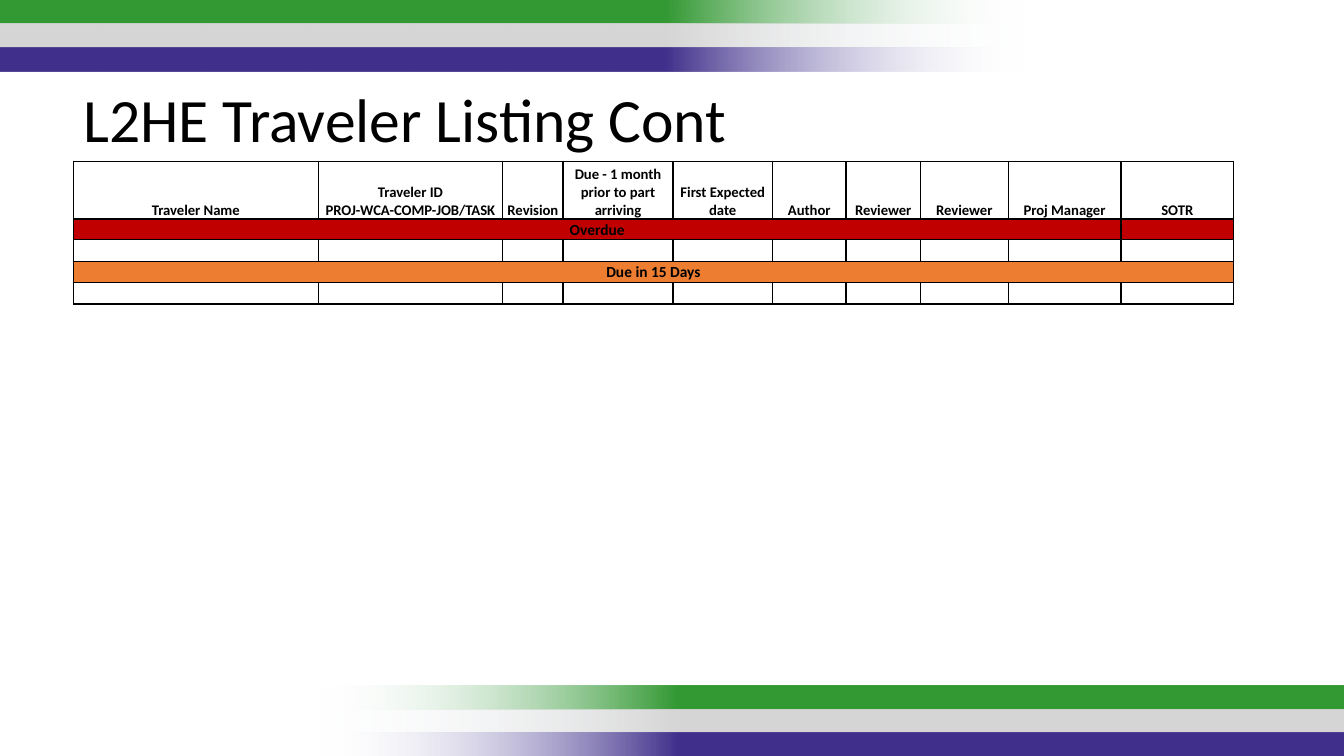
from lxml import etree
from pptx import Presentation
from pptx import util as u
from pptx.dml.color import RGBColor
from pptx.enum import shapes, text
from pptx.oxml import parse_xml
from pptx.oxml.ns import nsdecls, qn

COLORS = {
    "black": "000000", "green": "339933", "grey": "D6D6D6", "purple": "42318C",
    "fade": "F7FAFD", "overdue": "C00000", "due_soon": "ED7D31",
}
FONT = "Calibri"
HEADERS = [
    "Traveler Name", "Traveler ID\nPROJ-WCA-COMP-JOB/TASK", "Revision",
    "Due - 1 month prior to part arriving", "First Expected date", "Author",
    "Reviewer", "Reviewer", "Proj Manager", "SOTR",
]
COL_WIDTHS = [6.17, 4.65, 1.52, 2.77, 2.51, 1.85, 1.88, 2.21, 2.84, 2.84]
ROW_HEIGHTS = [1.46, 0.51, 0.55, 0.53, 0.55]
# row: (label, colour, number of merged columns)
STATUS_ROWS = {1: ("Overdue", "overdue", 9), 3: ("Due in 15 Days", "due_soon", 10)}


def rgb(name):
    return RGBColor.from_string(COLORS[name])


def format_runs(p, size, bold=False):
    for r in p.runs:
        for name, value in {"name": FONT, "size": u.Pt(size), "bold": bold}.items():
            setattr(r.font, name, value)
        r.font.color.rgb = rgb("black")


def add_bands(s, left, top, width, height, rotation=0):
    """Three stacked stripes, each fading out at one end."""
    band_h = height / 3
    for i, color in enumerate(("green", "grey", "purple")):
        sp = s.shapes.add_shape(
            shapes.MSO_SHAPE.RECTANGLE, u.Cm(left), u.Cm(top + i * band_h),
            u.Cm(width), u.Cm(band_h))
        sp.rotation = rotation
        sp.shadow.inherit = False
        sp.line.fill.background()
        grad = parse_xml(
            f'<a:gradFill {nsdecls("a")} rotWithShape="1"><a:gsLst>'
            f'<a:gs pos="0"><a:srgbClr val="{COLORS["fade"]}"><a:alpha val="0"/></a:srgbClr></a:gs>'
            f'<a:gs pos="35000"><a:srgbClr val="{COLORS[color]}"/></a:gs>'
            f'<a:gs pos="100000"><a:srgbClr val="{COLORS[color]}"/></a:gs>'
            '</a:gsLst><a:lin ang="0" scaled="0"/></a:gradFill>')
        sp._element.spPr.find(qn("a:prstGeom")).addnext(grad)


def add_title(s, left, top, width, height):
    sp = s.shapes.title
    box = {"left": left, "top": top, "width": width, "height": height}
    for name, value in box.items():
        setattr(sp, name, u.Cm(value))
    tf = sp.text_frame
    frame = {"word_wrap": True, "auto_size": text.MSO_AUTO_SIZE.NONE,
             "vertical_anchor": text.MSO_ANCHOR.TOP}
    for name, value in frame.items():
        setattr(tf, name, value)
    p = tf.paragraphs[0]
    p.text = "L2HE Traveler Listing Cont"
    p.alignment = text.PP_ALIGN.LEFT
    format_runs(p, 44)


def format_cell(cell):
    """Bottom anchor, tight margins, thin black borders and no fill."""
    margin = u.Cm(0.03)
    layout = {"margin_left": margin, "margin_right": margin, "margin_top": margin,
              "margin_bottom": 0, "vertical_anchor": text.MSO_ANCHOR.BOTTOM}
    for name, value in layout.items():
        setattr(cell, name, value)
    tc_pr = cell._tc.get_or_add_tcPr()
    for side in ("lnL", "lnR", "lnT", "lnB"):
        tc_pr.append(parse_xml(
            f'<a:{side} {nsdecls("a")} w="12700"><a:solidFill>'
            f'<a:srgbClr val="{COLORS["black"]}"/></a:solidFill></a:{side}>'))
    cell.fill.background()
    # Small type keeps empty rows low
    p = cell.text_frame.paragraphs[0]
    etree.SubElement(p._p, qn("a:endParaRPr"), sz="1000")


def write_cell(cell, label, size):
    p = cell.text_frame.paragraphs[0]
    p.text = label
    p.alignment = text.PP_ALIGN.CENTER
    format_runs(p, size, bold=True)


def add_listing(s, left, top):
    table = s.shapes.add_table(
        len(ROW_HEIGHTS), len(COL_WIDTHS), u.Cm(left), u.Cm(top),
        u.Cm(sum(COL_WIDTHS)), u.Cm(sum(ROW_HEIGHTS))).table
    table.first_row = table.horz_banding = False
    for col, width in zip(table.columns, COL_WIDTHS):
        col.width = u.Cm(width)
    for row, height in zip(table.rows, ROW_HEIGHTS):
        row.height = u.Cm(height)
        for cell in row.cells:
            format_cell(cell)
    # Header row
    for col, label in enumerate(HEADERS):
        write_cell(table.cell(0, col), label, 10.5)
    # Status rows
    for row, (label, color, span) in STATUS_ROWS.items():
        for cell in table.rows[row].cells:
            cell.fill.solid()
            cell.fill.fore_color.rgb = rgb(color)
        table.cell(row, 0).merge(table.cell(row, span - 1))
        write_cell(table.cell(row, 0), label, 11)


def main():
    prs = Presentation()
    prs.slide_width, prs.slide_height = u.Cm(33.87), u.Cm(19.05)
    s = prs.slides.add_slide(prs.slide_layouts[5])
    add_bands(s, -0.03, 0, 25.83, 1.8, rotation=180)
    add_bands(s, 8.06, 17.27, 25.83, 1.8)
    add_listing(s, 1.85, 4.06)
    add_title(s, 1.85, 1.91, 26.19, 2.13)
    prs.save("out.pptx")


if __name__ == "__main__":
    main()
